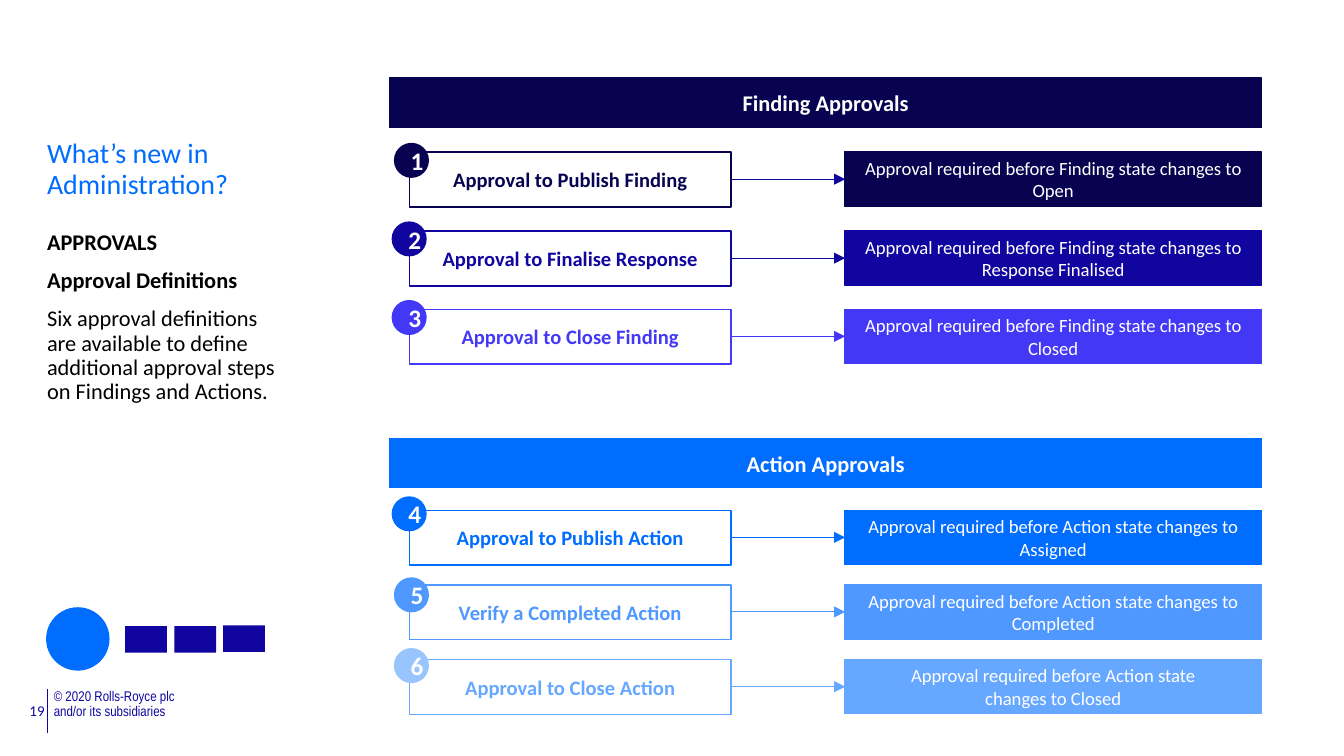
from lxml import etree
from pptx import Presentation
from pptx.dml.color import RGBColor
from pptx.enum import shapes, text
from pptx.oxml import ns
from pptx.util import Pt

NAVY, INDIGO, VIOLET = "080350", "10069F", "4438F7"
BLUE, SKY, PALE, MIST = "006DFF", "4F98FF", "66A7FF", "99C5FF"
WHITE, BLACK = "FFFFFF", "000000"
SHAPE = shapes.MSO_SHAPE
ALIGN = text.PP_ALIGN


def write(sp, lines, size, color, bold=False, align=ALIGN.CENTER, font="Calibri"):
    """Fill a shape with one paragraph per line."""
    tf = sp.text_frame
    tf.word_wrap = True
    for i, line in enumerate(lines):
        p = tf.paragraphs[0] if i == 0 else tf.add_paragraph()
        p.alignment = align
        r = p.add_run()
        r.text = line
        r.font.name, r.font.size, r.font.bold = font, Pt(size), bold
        r.font.color.rgb = RGBColor.from_string(color)
    return tf


def add_block(kind, x, y, w, h, fill=None, line=None):
    sp = s.shapes.add_shape(kind, Pt(x), Pt(y), Pt(w), Pt(h))
    sp.shadow.inherit = False
    if fill:
        sp.fill.solid()
        sp.fill.fore_color.rgb = RGBColor.from_string(fill)
    else:
        sp.fill.background()
    if line:
        sp.line.color.rgb = RGBColor.from_string(line)
        sp.line.width = Pt(0.75)
    else:
        sp.line.fill.background()
    sp.text_frame.vertical_anchor = text.MSO_ANCHOR.MIDDLE
    return sp


prs = Presentation()
prs.slide_width, prs.slide_height = Pt(720), Pt(405)
s = prs.slides.add_slide(prs.slide_layouts[1])

# Title and body
title, body = s.placeholders
for sp, y, h in ((title, 71.3, 43.2), (body, 120.2, 205.2)):
    sp.left, sp.top, sp.width, sp.height = Pt(18), Pt(y), Pt(140.4), Pt(h)
    sp.text_frame.auto_size = text.MSO_AUTO_SIZE.NONE
    sp.text_frame.vertical_anchor = text.MSO_ANCHOR.TOP
tf = write(title, ["What’s new in Administration?"], 15, BLUE, align=ALIGN.LEFT)
tf.paragraphs[0].line_spacing = 0.9

tf = write(body, [
    "APPROVALS",
    "Approval Definitions",
    "Six approval definitions are available to define additional approval steps "
    "on Findings and Actions.",
], 12, BLACK, bold=True, align=ALIGN.LEFT)
for i, p in enumerate(tf.paragraphs):
    p.line_spacing = 0.9
    p.space_before = Pt(7.5 if i else 0)
    pPr = p._p.get_or_add_pPr()
    pPr.set("marL", "0")
    pPr.set("indent", "0")
    etree.SubElement(pPr, ns.qn("a:buNone"))
tf.paragraphs[2].runs[0].font.bold = False

# Footer
add_block(SHAPE.OVAL, 24.7, 325.3, 34, 34, BLUE)
for x, y in ((67, 335.4), (93.4, 335.4), (119.6, 335)):
    add_block(SHAPE.RECTANGLE, x, y, 22.4, 14.2, INDIGO)

sp = s.shapes.add_textbox(Pt(28.8), Pt(369.4), Pt(159.8), Pt(24.5))
tf = write(sp, ["© 2020 Rolls-Royce plc", "and/or its subsidiaries"], 7.5, INDIGO,
           align=ALIGN.LEFT, font="Arial Narrow")
tf.margin_left = tf.margin_top = tf.margin_right = tf.margin_bottom = 0
for p in tf.paragraphs:
    p.line_spacing = 0.9

sp = s.shapes.add_textbox(Pt(3.6), Pt(372.2), Pt(27.4), Pt(17.3))
write(sp, ["19"], 8, INDIGO, align=ALIGN.RIGHT)

# Lines: start, end, colour, arrowhead
ROWS = [
    # top, badge left, badge top, colour, badge colour, line colour, step, result
    (81.5, 211, 76.5, NAVY, NAVY, INDIGO, "Approval to Publish Finding",
     ["Approval required before Finding state changes to Open"]),
    (123.8, 209.8, 118.6, INDIGO, INDIGO, INDIGO, "Approval to Finalise Response",
     ["Approval required before Finding state changes to Response Finalised"]),
    (165.7, 209.8, 160.7, VIOLET, VIOLET, VIOLET, "Approval to Close Finding",
     ["Approval required before Finding state changes to Closed"]),
    (273.4, 209.8, 265.9, BLUE, BLUE, BLUE, "Approval to Publish Action",
     ["Approval required before Action state changes to Assigned"]),
    (313.3, 211, 309.3, SKY, SKY, SKY, "Verify a Completed Action",
     ["Approval required before Action state changes to Completed"]),
    (353.4, 211, 347.2, PALE, MIST, PALE, "Approval to Close Action",
     ["Approval required before Action state", "changes to Closed"]),
]
lines = [(25.4, 369.4, 25.4, 392.6, INDIGO, False)]
lines += [(392.4, row[0] + 14.5, 452.8, row[0] + 14.5, row[5], True) for row in ROWS]
for x1, y1, x2, y2, color, arrow in lines:
    line = s.shapes.add_connector(shapes.MSO_CONNECTOR.STRAIGHT,
                                  Pt(x1), Pt(y1), Pt(x2), Pt(y2))
    line.line.color.rgb = RGBColor.from_string(color)
    line.line.width = Pt(0.5)
    if arrow:
        etree.SubElement(line.line._get_or_add_ln(), ns.qn("a:tailEnd"), type="triangle")
    etree.SubElement(line._element.spPr, ns.qn("a:effectLst"))

# Approval steps
for i, (y, badge_x, badge_y, color, badge_color, _, step, result) in enumerate(ROWS, 1):
    sp = add_block(SHAPE.RECTANGLE, 219.4, y, 172.2, 29.4, line=color)
    write(sp, [step], 11, color, bold=True)
    sp = add_block(SHAPE.OVAL, badge_x, badge_y, 18.8, 18.8, badge_color)
    write(sp, [str(i)], 13.5, WHITE, bold=True)
    sp = add_block(SHAPE.RECTANGLE, 452.4, y, 223.6, 29, color, color)
    write(sp, result, 10, WHITE)

# Section headers
for y, color, name in ((41.8, NAVY, "Finding Approvals"), (234.9, BLUE, "Action Approvals")):
    sp = add_block(SHAPE.RECTANGLE, 208.8, y, 467.2, 26.4, color, color)
    write(sp, [name], 12, WHITE, bold=True)

prs.save("out.pptx")
